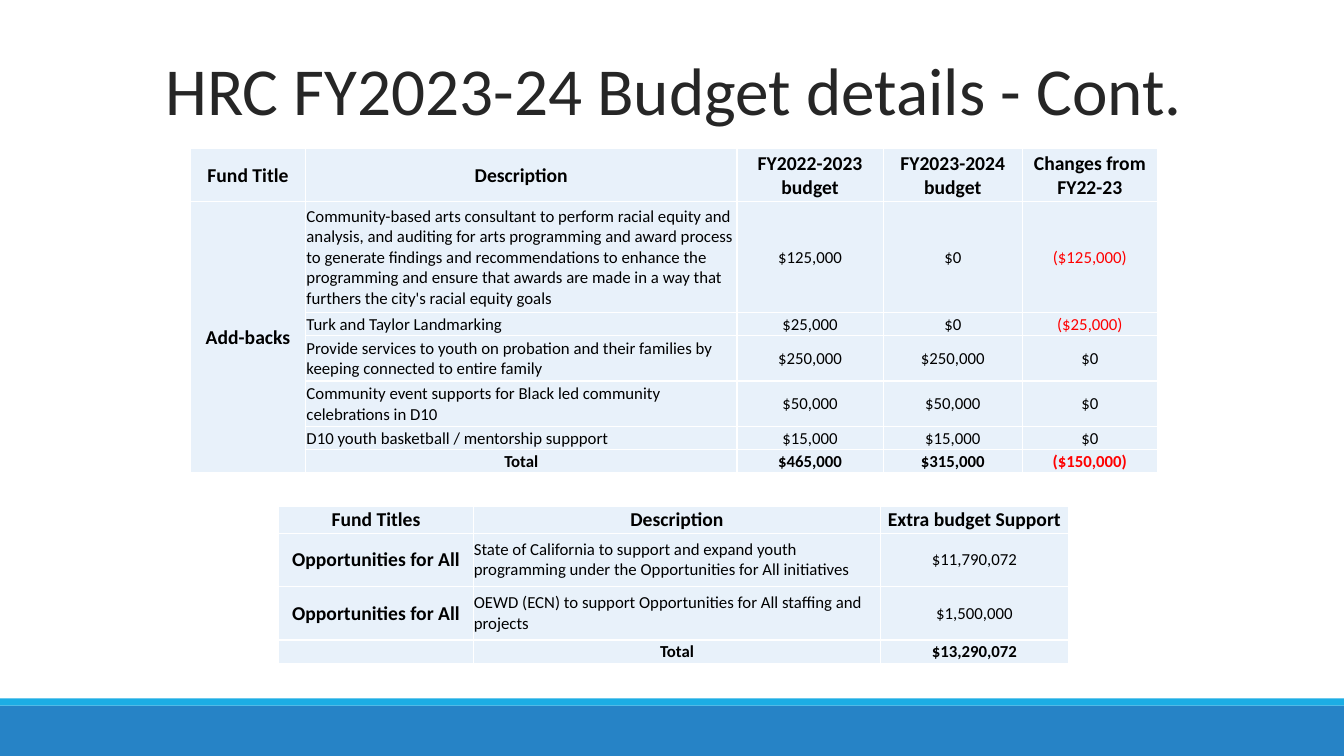
from lxml.etree import SubElement
from pptx import Presentation
from pptx.dml.color import RGBColor
from pptx.enum.shapes import MSO_SHAPE
from pptx.enum.text import MSO_ANCHOR, PP_ALIGN
from pptx.oxml.ns import qn
from pptx.util import Inches, Pt

COLORS = {"title": "262626", "text": "000000", "negative": "FF0000", "cell": "E8F1FA",
          "border": "FFFFFF", "band": "2683C6", "stripe": "1CADE4"}

ADD_BACKS = [
    ["Fund Title", "Description", "FY2022-2023 budget", "FY2023-2024 budget", "Changes from FY22-23"],
    ["Add-backs", "Community-based arts consultant to perform racial equity and analysis, and auditing "
     "for arts programming and award process to generate findings and recommendations to enhance the "
     "programming and ensure that awards are made in a way that furthers the city's racial equity goals",
     "$125,000", "$0", "($125,000)"],
    ["", "Turk and Taylor Landmarking", "$25,000", "$0", "($25,000)"],
    ["", "Provide services to youth on probation and their families by keeping connected to entire family",
     "$250,000", "$250,000", "$0"],
    ["", "Community event supports for Black led community celebrations in D10",
     "$50,000", "$50,000", "$0"],
    ["", "D10 youth basketball / mentorship suppport", "$15,000", "$15,000", "$0"],
    ["", "Total", "$465,000", "$315,000", "($150,000)"],
]

EXTRA_SUPPORT = [
    ["Fund Titles", "Description", "Extra budget Support"],
    ["Opportunities for All", "State of California to support and expand youth programming under the "
     "Opportunities for All initiatives", "$11,790,072"],
    ["Opportunities for All", "OEWD (ECN) to support Opportunities for All staffing and projects",
     "$1,500,000"],
    ["", "Total", "$13,290,072"],
]


class BudgetSlide:
    """Hold the style and the current slide."""

    font_name = "Calibri"

    def __init__(self, presentation):
        """Add a title-only slide."""
        self.slide = presentation.slides.add_slide(presentation.slide_layouts[5])

    def apply(self, target, formats):
        """Set each format value on the target."""
        for name, value in formats.items():
            setattr(target, name, value)

    def add_text(self, paragraph, text, size, color, bold=False, alignment=PP_ALIGN.CENTER):
        """Add one formatted run."""
        paragraph.alignment = alignment
        run = paragraph.add_run()
        run.text = text
        self.apply(run.font, {"name": self.font_name, "size": Pt(size), "bold": bold})
        run.font.color.rgb = RGBColor.from_string(COLORS[color])

    def title(self, text, left, top, width, height):
        """Place and fill the title placeholder."""
        shape = self.slide.shapes.title
        self.apply(shape, {"left": Inches(left), "top": Inches(top),
                           "width": Inches(width), "height": Inches(height)})
        self.apply(shape.text_frame, {"word_wrap": True, "vertical_anchor": MSO_ANCHOR.MIDDLE})
        self.add_text(shape.text_frame.paragraphs[0], text, 48, "title")

    def band(self, top, height, color):
        """Draw a full-width band."""
        shape = self.slide.shapes.add_shape(
            MSO_SHAPE.RECTANGLE, 0, Inches(top), Inches(13.33), Inches(height))
        shape.shadow.inherit = False
        shape.fill.solid()
        shape.fill.fore_color.rgb = RGBColor.from_string(COLORS[color])
        shape.line.fill.background()

    def borders(self, cell):
        """Give a cell thin borders on every side."""
        properties = cell._tc.get_or_add_tcPr()
        for side in ("a:lnL", "a:lnR", "a:lnT", "a:lnB"):
            line = SubElement(properties, qn(side), w=str(Pt(1)))
            fill = SubElement(line, qn("a:solidFill"))
            SubElement(fill, qn("a:srgbClr"), val=COLORS["border"])

    def cell(self, cell, text, heading, total, description, margin):
        """Format and fill one table cell."""
        self.borders(cell)
        cell.fill.solid()
        cell.fill.fore_color.rgb = RGBColor.from_string(COLORS["cell"])
        self.apply(cell, {"vertical_anchor": MSO_ANCHOR.MIDDLE, "margin_left": Inches(margin),
                          "margin_right": Inches(margin), "margin_top": Inches(margin),
                          "margin_bottom": 0})
        paragraph = cell.text_frame.paragraphs[0]
        if not text:
            paragraph._p.get_or_add_endParaRPr().set("sz", "1200")
            return
        plain_description = description and not heading and not total
        self.add_text(paragraph, text, 14 if heading else 12,
                      "negative" if text.startswith("(") else "text", heading or total,
                      PP_ALIGN.LEFT if plain_description else PP_ALIGN.CENTER)

    def table(self, rows, left, top, widths, heights, margin):
        """Add a budget table and return it."""
        frame = self.slide.shapes.add_table(
            len(rows), len(widths), Inches(left), Inches(top),
            Inches(sum(widths)), Inches(sum(heights)))
        table = frame.table
        self.apply(table, {"first_row": False, "horz_banding": False})
        for column, width in zip(table.columns, widths):
            column.width = Inches(width)
        for row, height in zip(table.rows, heights):
            row.height = Inches(height)
        for row_index, values in enumerate(rows):
            for column_index, text in enumerate(values):
                self.cell(table.cell(row_index, column_index), text,
                          row_index == 0 or column_index == 0, values[1] == "Total",
                          column_index == 1, margin)
        return table


def main():
    """Build and save the budget slide."""
    presentation = Presentation()
    presentation.slide_width = Inches(13.33)
    presentation.slide_height = Inches(7.5)
    budget = BudgetSlide(presentation)
    budget.band(7, 0.5, "band")
    budget.band(6.93, 0.07, "stripe")
    budget.title("HRC FY2023-24 Budget details - Cont.", 0.97, 0.42, 11.43, 0.91)
    add_backs = budget.table(ADD_BACKS, 1.89, 1.47, [1.14, 4.28, 1.45, 1.38, 1.34],
                             [0.53, 1.1, 0.23, 0.45, 0.45, 0.23, 0.23], 0.01)
    add_backs.cell(1, 0).merge(add_backs.cell(6, 0))
    budget.table(EXTRA_SUPPORT, 2.76, 5.02, [1.94, 4.03, 1.87], [0.27, 0.53, 0.53, 0.23], 0)
    presentation.save("out.pptx")


if __name__ == "__main__":
    main()
